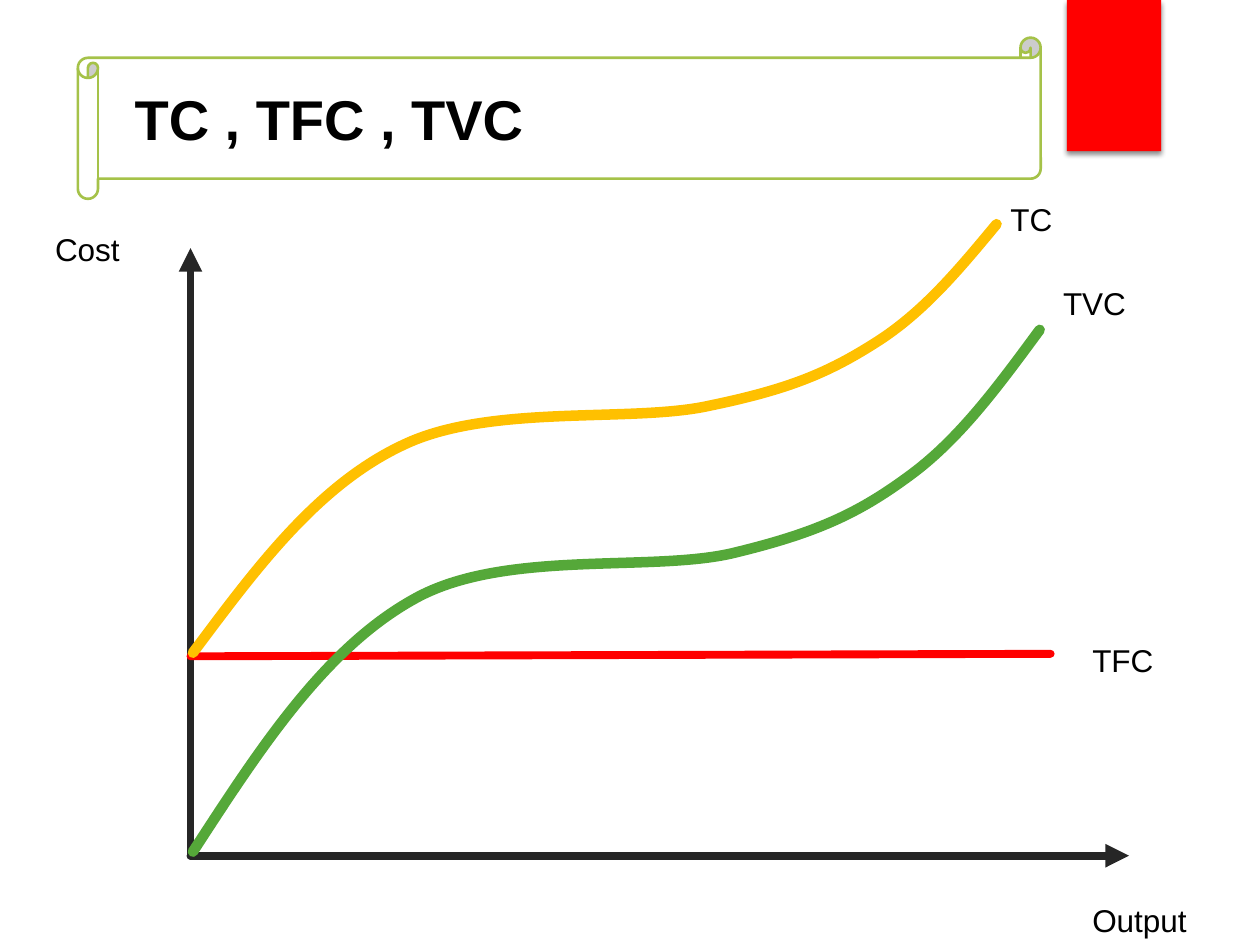
from lxml.etree import SubElement as Sub
from pptx import Presentation
from pptx.dml.color import RGBColor as Rgb
from pptx.enum.shapes import MSO_CONNECTOR as Conn, MSO_SHAPE as Kind
from pptx.enum.text import MSO_ANCHOR as Anchor, MSO_AUTO_SIZE as Auto, PP_ALIGN as Align
from pptx.oxml.ns import qn
from pptx.util import Cm, Pt

TITLE = "TC , TFC , TVC"
ORIGIN = (3.84, 17.25)
LINES = [
    (ORIGIN, (3.84, 5), "262626", True),
    (ORIGIN, (22.76, 17.25), "262626", True),
    ((3.84, 13.23), (21.18, 13.18), "FF0000", False),
]
CURVES = [
    ("55A839", (3.89, 17.17), [
        [(5.21, 15.14), (6.53, 13.08), (8.36, 12.07)],
        [(10.19, 11.05), (13.21, 11.56), (14.86, 11.13)],
        [(16.54, 10.72), (17.37, 10.31), (18.39, 9.55)],
        [(19.38, 8.81), (20.17, 7.72), (20.96, 6.65)]]),
    ("FFC000", (3.89, 13.16), [
        [(5.16, 11.46), (6.4, 9.78), (8.13, 8.97)],
        [(9.88, 8.13), (12.73, 8.53), (14.3, 8.18)],
        [(15.9, 7.85), (16.69, 7.52), (17.65, 6.91)],
        [(18.62, 6.3), (19.35, 5.41), (20.09, 4.52)]]),
]
LABELS = [
    ("TFC", 21.77, 12.8, 2.7),
    ("TVC", 21.18, 5.61, 2.7),
    ("TC", 20.12, 3.91, 2.7),
    ("Output", 21.77, 18.03, 3.02),
    ("Cost", 0.86, 4.52, 2.7),
]


def cms(*nums):
    """Turn numbers into lengths."""
    return [Cm(n) for n in nums]


def paint(part, color):
    """Give a fill, line or font format a solid colour."""
    part.fill.solid()
    part.fill.fore_color.rgb = Rgb.from_string(color)


def stroke(shape, color, width):
    """Draw a round-ended line without a shadow."""
    paint(shape.line, color)
    shape.line.width = Pt(width)
    props = shape.element.spPr
    ln = props.find(qn("a:ln"))
    ln.set("cap", "rnd")
    Sub(ln, qn("a:round"))
    Sub(props, qn("a:effectLst"))
    return ln


def write(shape, text, size, bold=False):
    """Set one line of left-aligned black text."""
    frame = shape.text_frame
    frame.text = text
    frame.word_wrap = True
    para = frame.paragraphs[0]
    para.alignment = Align.LEFT
    font = para.font
    font.name, font.size, font.bold = "Arial", Pt(size), bold
    paint(font, "000000")
    return frame


def add_block(shapes, kind, box, color):
    """Add a filled preset shape."""
    shape = shapes.add_shape(kind, *cms(*box))
    paint(shape, color)
    shape.shadow.inherit = False
    return shape


def add_header(slide):
    """Add the scroll, the red tab and the title."""
    shapes = slide.shapes
    scroll = add_block(shapes, Kind.HORIZONTAL_SCROLL, (1.57, 0.76, 19.41, 3.25), "FFFFFF")
    paint(scroll.line, "A5C249")
    scroll.line.width = Pt(1.5)
    tab = add_block(shapes, Kind.RECTANGLE, (21.51, 0, 1.9, 3.05), "FF0000")
    tab.line.fill.background()
    shade = Sub(tab.element.spPr.find(qn("a:effectLst")), qn("a:outerShdw"),
                blurRad=str(Pt(3)), dist=str(Pt(2)), dir="5400000", rotWithShape="0")
    Sub(Sub(shade, qn("a:srgbClr"), val="000000"), qn("a:alpha"), val="45000")
    title = shapes.title
    title.left, title.top, title.width, title.height = cms(2.46, 1.4, 17.63, 1.98)
    frame = write(title, TITLE, 32, True)
    frame.vertical_anchor = Anchor.MIDDLE
    frame.auto_size = Auto.NONE
    tab.element.addnext(title.element)


def add_line(shapes, start, end, color, arrow):
    """Add a straight line, with an arrowhead for an axis."""
    line = shapes.add_connector(Conn.STRAIGHT, *cms(*start, *end))
    ln = stroke(line, color, 4.5)
    if arrow:
        Sub(ln, qn("a:tailEnd"), type="triangle")


def add_curve(shapes, color, start, parts):
    """Add a freeform whose segments are Bezier curves."""
    form = shapes.build_freeform(*cms(*start), scale=1.0)
    form.add_line_segments([cms(*part[-1]) for part in parts], close=False)
    curve = form.convert_to_shape()
    curve.fill.background()
    stroke(curve, color, 6)
    for step, part in zip(list(curve.element.iter(qn("a:lnTo"))), parts):
        step.tag = qn("a:cubicBezTo")
        step.clear()
        for x, y in part:
            Sub(step, qn("a:pt"), x=str(Cm(x) - curve.left), y=str(Cm(y) - curve.top))


def main():
    """Build the cost curve slide."""
    deck = Presentation()
    deck.slide_width, deck.slide_height = cms(25.4, 19.05)
    slide = deck.slides.add_slide(deck.slide_layouts[5])
    shapes = slide.shapes
    add_header(slide)
    for line in LINES:
        add_line(shapes, *line)
    for curve in CURVES:
        add_curve(shapes, *curve)
    for text, left, top, width in LABELS:
        box = shapes.add_textbox(*cms(left, top, width, 1.02))
        write(box, text, 18).auto_size = Auto.SHAPE_TO_FIT_TEXT
    deck.save("out.pptx")


if __name__ == "__main__":
    main()
